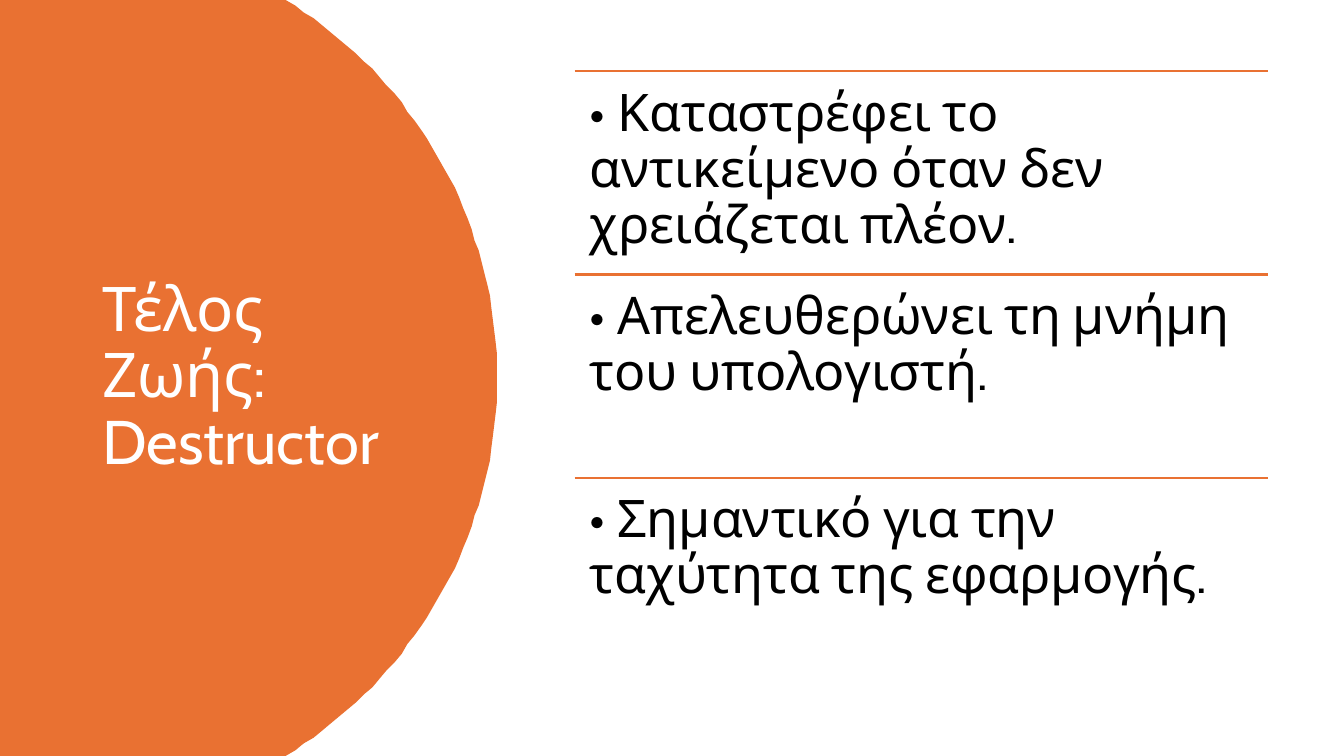
"""Build the destructor slide: a title on a round panel beside three ruled points."""
from lxml import etree
from pptx import Presentation
from pptx.dml.color import RGBColor
from pptx.enum.shapes import MSO_CONNECTOR
from pptx.enum.text import MSO_ANCHOR, MSO_AUTO_SIZE, PP_ALIGN
from pptx.oxml.ns import qn
from pptx.util import Pt

TITLE = "Τέλος Ζωής: Destructor"
POINTS = [
    "• Καταστρέφει το αντικείμενο όταν δεν χρειάζεται πλέον.",
    "• Απελευθερώνει τη μνήμη του υπολογιστή.",
    "• Σημαντικό για την ταχύτητα της εφαρμογής.",
]

ORANGE = RGBColor(0xE9, 0x71, 0x32)
WHITE = RGBColor(0xFF, 0xFF, 0xFF)
BLACK = RGBColor(0x00, 0x00, 0x00)
STRAIGHT = MSO_CONNECTOR.STRAIGHT
TOP, MIDDLE = MSO_ANCHOR.TOP, MSO_ANCHOR.MIDDLE
LEFT = PP_ALIGN.LEFT
NO_FIT = MSO_AUTO_SIZE.NONE

SLIDE_W, SLIDE_H = 960, 540
CURVE = [(203.8, 0), (294.5, 55.4), (355, 155.5), (355, 270)]
CURVE_STEPS = 40
LIST_X, LIST_Y, LIST_W, ROW_H = 410.4, 51, 495.4, 145.1


def curve_point(t):
    """Return the point of the panel's upper edge at t from 0 to 1."""
    weights = ((1 - t) ** 3, 3 * t * (1 - t) ** 2, 3 * t * t * (1 - t), t ** 3)
    return tuple(sum(w * p[axis] for w, p in zip(weights, CURVE)) for axis in (0, 1))


def write(sp, text, size, color, anchor=TOP, inset=None, after=0):
    """Put one formatted paragraph into a shape."""
    tf = sp.text_frame
    tf.word_wrap = True
    tf.auto_size = NO_FIT
    tf.vertical_anchor = anchor
    if inset is not None:
        tf.margin_left = tf.margin_right = tf.margin_top = tf.margin_bottom = Pt(inset)
    p = tf.paragraphs[0]
    p.alignment = LEFT
    p.line_spacing = 0.9
    p.space_before = Pt(0)
    p.space_after = Pt(after)
    r = p.add_run()
    r.text = text
    r.font.name = "Cabin"
    r.font.size = Pt(size)
    r.font.color.rgb = color


def add_panel(shapes):
    """Draw the round-edged panel behind everything else."""
    upper = [curve_point(i / CURVE_STEPS) for i in range(CURVE_STEPS + 1)]
    lower = [(x, SLIDE_H - y) for x, y in reversed(upper[:-1])]
    outline = upper + lower + [(0, SLIDE_H)]
    builder = shapes.build_freeform(0, 0, scale=Pt(1))
    builder.add_line_segments(outline, close=True)
    sp = builder.convert_to_shape()
    sp.shadow.inherit = False
    sp.fill.solid()
    sp.fill.fore_color.rgb = ORANGE
    sp.line.fill.background()
    shapes._spTree.insert(2, sp._element)


def add_point(shapes, text, y):
    """Draw a rule with one point below it."""
    rule = shapes.add_connector(STRAIGHT, Pt(LIST_X), Pt(y), Pt(LIST_X + LIST_W), Pt(y))
    rule.line.color.rgb = ORANGE
    rule.line.width = Pt(1.5)
    etree.SubElement(rule._element.spPr, qn("a:effectLst"))
    sp = shapes.add_textbox(Pt(LIST_X), Pt(y), Pt(LIST_W), Pt(ROW_H))
    write(sp, text, 37, BLACK, inset=11, after=13)


def main():
    """Build and save the slide."""
    prs = Presentation()
    prs.slide_width, prs.slide_height = Pt(SLIDE_W), Pt(SLIDE_H)
    s = prs.slides.add_slide(prs.slide_layouts[5])
    add_panel(s.shapes)
    title = s.shapes.title
    title.left, title.top, title.width, title.height = Pt(66), Pt(50.5), Pt(232.5), Pt(438.5)
    write(title, TITLE, 44, WHITE, anchor=MIDDLE)
    for i, text in enumerate(POINTS):
        add_point(s.shapes, text, LIST_Y + i * ROW_H)
    prs.save("out.pptx")


if __name__ == "__main__":
    main()
